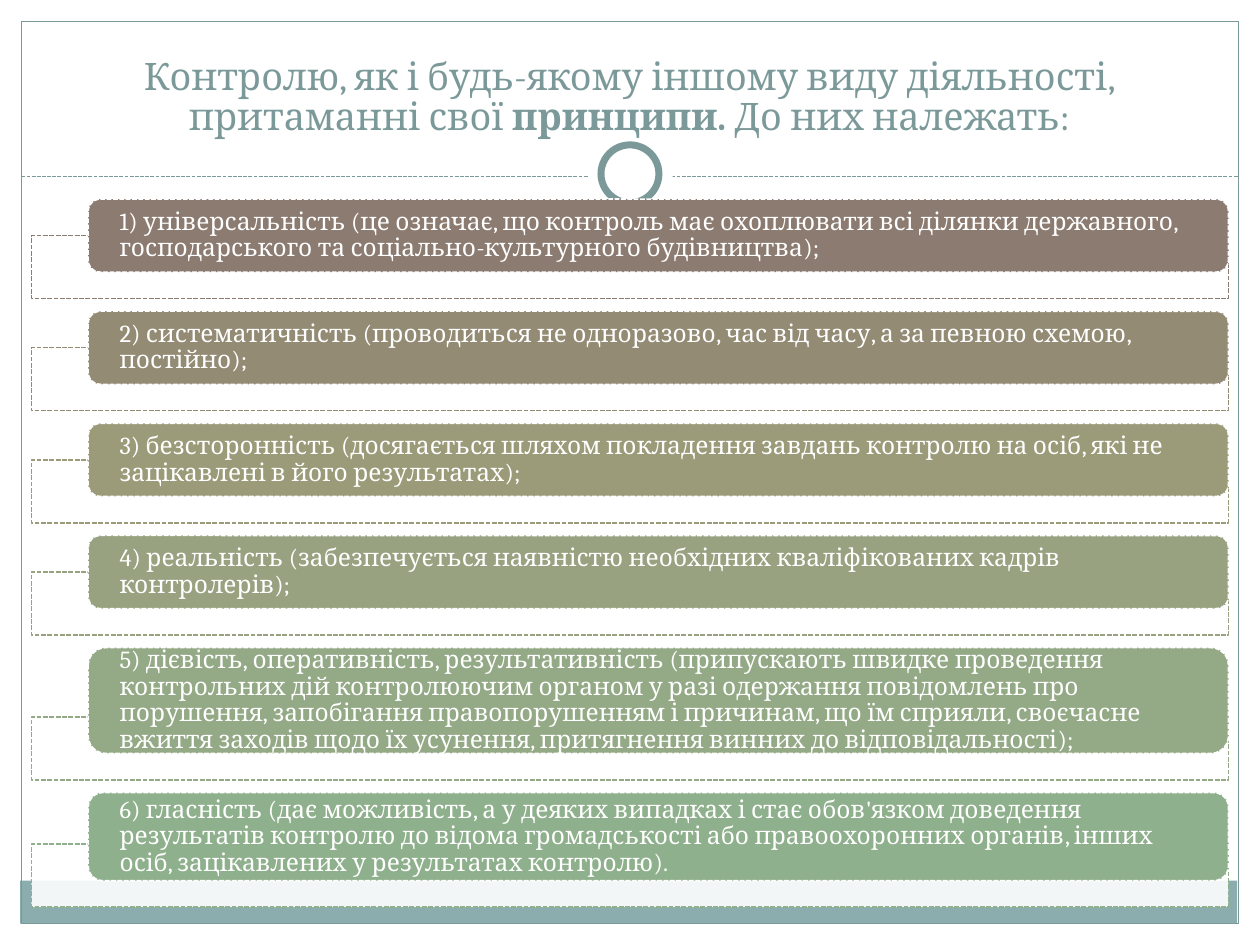
from dataclasses import dataclass
from typing import Any, Optional

from pptx import Presentation
from pptx.dml.color import RGBColor
from pptx.enum.dml import MSO_LINE_DASH_STYLE as Dash
from pptx.enum.shapes import MSO_CONNECTOR as Connector, MSO_SHAPE as Preset
from pptx.enum.text import MSO_ANCHOR as Anchor, MSO_AUTO_SIZE as AutoSize, PP_ALIGN as Align
from pptx.oxml.ns import qn
from pptx.util import Inches, Pt
from lxml.etree import SubElement


@dataclass(frozen=True)
class Theme:
    font: str = "Cambria"
    paper: str = "FFFFFF"
    accent: str = "7C999A"
    footer: str = "8CADAE"
    title_size: float = 21.6
    body_size: float = 14
    thin: float = 0.75
    dashed: float = 0.9
    ring: float = 4
    frame_opacity: int = 90


@dataclass(frozen=True)
class Box:
    left: float
    top: float
    width: float
    height: float
    fill: Optional[str] = None
    line: Optional[str] = None
    weight: float = 0
    dash: Any = None
    preset: Any = Preset.RECTANGLE


@dataclass(frozen=True)
class Principle:
    text: str
    color: str
    height: float = 0.58


THEME = Theme()
SLIDE_W, SLIDE_H = 10, 7.5
MARGIN = 0.17
RULE_Y = 1.4
BAR_LEFT, FRAME_LEFT, RIGHT = 0.7, 0.25, 9.75
FIRST_BAR_TOP, BAR_GAP = 1.58, 0.31
FRAME_HEIGHT, FRAME_OVERLAP = 0.5, 0.29
TEXT_INSET, CORNER_INSET = 0.25, 0.05

BACKDROP = [
    Box(0, 0, SLIDE_W, 1.52, THEME.paper),
    Box(0, 0, MARGIN, SLIDE_H, THEME.paper),
    Box(SLIDE_W - MARGIN, 0, MARGIN, SLIDE_H, THEME.paper),
    Box(0.16, 6.99, 9.66, 0.34, THEME.footer),
    Box(MARGIN, MARGIN, SLIDE_W - 2 * MARGIN, SLIDE_H - 2 * MARGIN,
        line=THEME.accent, weight=THEME.thin),
]
RING = [
    Box(4.67, 1.05, 0.67, 0.67, THEME.paper, preset=Preset.OVAL),
    Box(4.77, 1.15, 0.46, 0.46, THEME.paper, THEME.accent, THEME.ring, preset=Preset.OVAL),
]
TITLE_RUNS = [
    ("Контролю, як і будь-якому іншому виду діяльності, притаманні свої ", False),
    ("принципи.", True),
    (" До них належать:", False),
]
PRINCIPLES = [
    Principle("1) універсальність (це означає, що контроль має охоплювати всі ділянки "
              "державного, господарського та соціально-культурного будівництва);", "8C7B70"),
    Principle("2) систематичність (проводиться не одноразово, час від часу, а за певною "
              "схемою, постійно);", "948B75"),
    Principle("3) безсторонність (досягається шляхом покладення завдань контролю на осіб, "
              "які не зацікавлені в його результатах);", "9B9B7A"),
    Principle("4) реальність (забезпечується наявністю необхідних кваліфікованих кадрів "
              "контролерів);", "98A280"),
    Principle("5) дієвість, оперативність, результативність (припускають швидке проведення "
              "контрольних дій контролюючим органом у разі одержання повідомлень про "
              "порушення, запобігання правопорушенням і причинам, що їм сприяли, своєчасне "
              "вжиття заходів щодо їх усунення, притягнення винних до відповідальності);",
              "94A986", 0.84),
    Principle("6) гласність (дає можливість, а у деяких випадках і стає обов'язком доведення "
              "результатів контролю до відома громадськості або правоохоронних органів, інших "
              "осіб, зацікавлених у результатах контролю).", "8FB08C", 0.7),
]


def apply_format(target: Any, values: dict[str, Any]) -> None:
    for attribute, value in values.items():
        setattr(target, attribute, value)


def style_line(line: Any, color: str, weight: float, dash: Any) -> None:
    line.color.rgb = RGBColor.from_string(color)
    apply_format(line, {"width": Pt(weight), "dash_style": dash})


def draw_box(slide: Any, box: Box) -> Any:
    shape = slide.shapes.add_shape(
        box.preset, *map(Inches, (box.left, box.top, box.width, box.height)))
    shape.shadow.inherit = False
    if box.fill:
        shape.fill.solid()
        shape.fill.fore_color.rgb = RGBColor.from_string(box.fill)
    else:
        shape.fill.background()
    if box.line:
        style_line(shape.line, box.line, box.weight, box.dash)
    else:
        shape.line.fill.background()
    return shape


def draw_rule(slide: Any) -> None:
    rule = slide.shapes.add_connector(
        Connector.STRAIGHT, Inches(MARGIN), Inches(RULE_Y),
        Inches(SLIDE_W - MARGIN), Inches(RULE_Y))
    style_line(rule.line, THEME.accent, THEME.thin, Dash.SQUARE_DOT)
    SubElement(rule._element.spPr, qn("a:effectLst"))


def add_run(paragraph: Any, text: str, size: float, color: str, bold: bool = False) -> None:
    run = paragraph.add_run()
    run.text = text
    apply_format(run.font, {"name": THEME.font, "size": Pt(size), "bold": bold})
    run.font.color.rgb = RGBColor.from_string(color)


def write_title(slide: Any) -> None:
    title = slide.shapes.title
    slide.shapes._spTree.append(title._element)
    apply_format(title, {"left": Inches(0.33), "top": Inches(0.25),
                         "width": Inches(9.33), "height": Inches(1.17)})
    frame = title.text_frame
    apply_format(frame, {"word_wrap": True, "auto_size": AutoSize.NONE,
                         "vertical_anchor": Anchor.BOTTOM, "margin_bottom": Inches(0.32)})
    heading = frame.paragraphs[0]
    apply_format(heading, {"alignment": Align.CENTER, "line_spacing": 0.88})
    for text, bold in TITLE_RUNS:
        add_run(heading, text, THEME.title_size, THEME.accent, bold)


def draw_principle(slide: Any, principle: Principle, top: float) -> None:
    frame = draw_box(slide, Box(
        FRAME_LEFT, top + principle.height - FRAME_OVERLAP, RIGHT - FRAME_LEFT, FRAME_HEIGHT,
        THEME.paper, principle.color, THEME.dashed, Dash.SQUARE_DOT))
    frame_color = frame._element.spPr.find(qn("a:solidFill"))[0]
    SubElement(frame_color, qn("a:alpha"), val=str(THEME.frame_opacity * 1000))

    bar = draw_box(slide, Box(
        BAR_LEFT, top, RIGHT - BAR_LEFT, principle.height, principle.color,
        THEME.paper, THEME.dashed, Dash.SQUARE_DOT, Preset.ROUNDED_RECTANGLE))
    side = Inches(TEXT_INSET - CORNER_INSET * principle.height)
    apply_format(bar.text_frame, {
        "word_wrap": True, "vertical_anchor": Anchor.MIDDLE, "margin_left": side,
        "margin_right": side, "margin_top": 0, "margin_bottom": 0})
    statement = bar.text_frame.paragraphs[0]
    apply_format(statement, {"alignment": Align.LEFT, "line_spacing": 0.9})
    add_run(statement, principle.text, THEME.body_size, THEME.paper)


def main() -> None:
    deck = Presentation()
    apply_format(deck, {"slide_width": Inches(SLIDE_W), "slide_height": Inches(SLIDE_H)})
    slide = deck.slides.add_slide(deck.slide_layouts[5])
    for box in BACKDROP:
        draw_box(slide, box)
    draw_rule(slide)
    for box in RING:
        draw_box(slide, box)
    write_title(slide)
    top = FIRST_BAR_TOP
    for principle in PRINCIPLES:
        draw_principle(slide, principle, top)
        top += principle.height + BAR_GAP
    deck.save("out.pptx")


if __name__ == "__main__":
    main()
